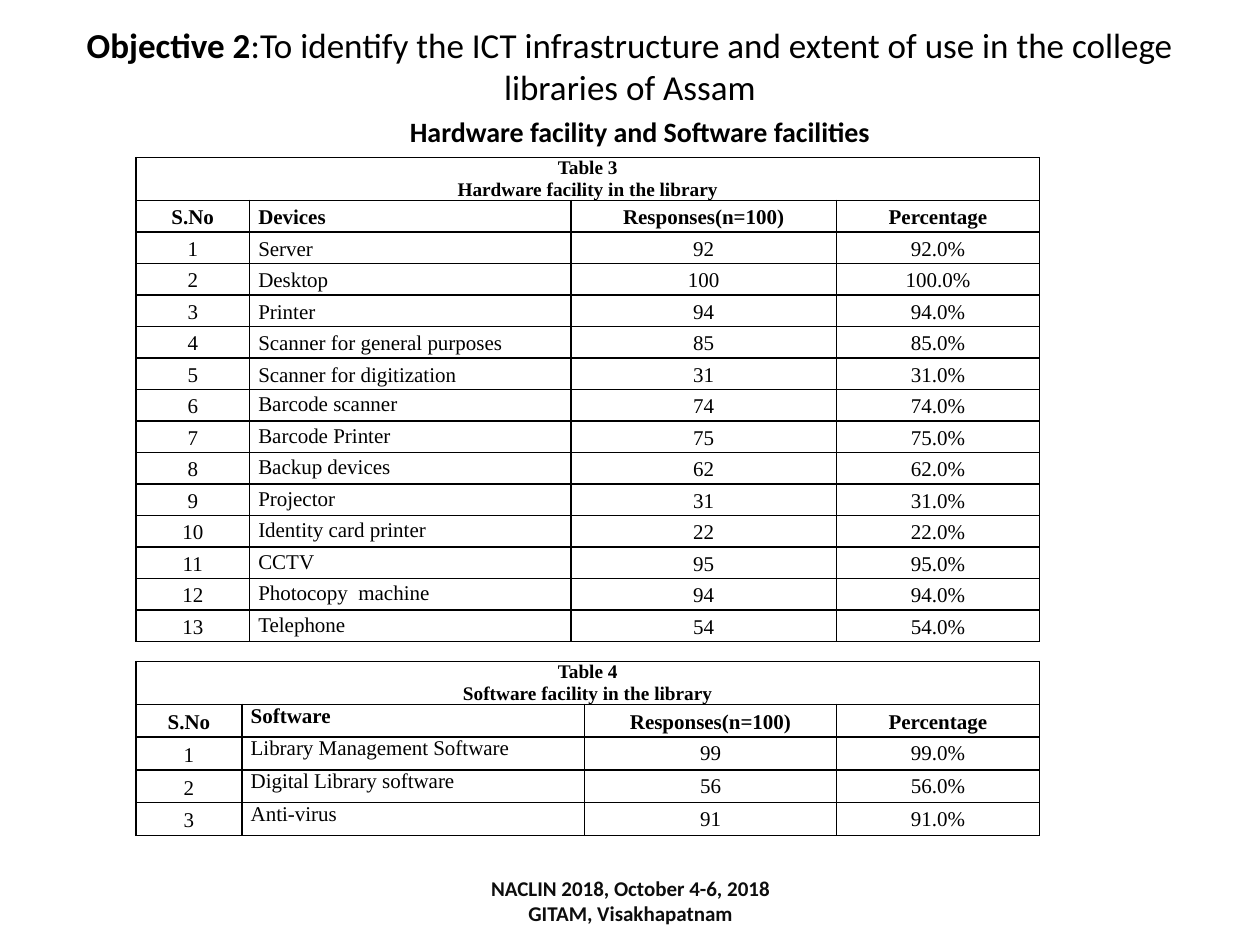
from lxml import etree
from pptx import Presentation
from pptx import util as u
from pptx.dml.color import RGBColor
from pptx.enum import text
from pptx.oxml import ns

hues = {"ink": "000000", "foot": "0D0D0D"}
mid, top = text.MSO_ANCHOR.MIDDLE, text.MSO_ANCHOR.TOP
left, center, just = text.PP_ALIGN.LEFT, text.PP_ALIGN.CENTER, text.PP_ALIGN.JUSTIFY
sans, serif = "Calibri", "Times New Roman"


def write(frame, lines, size, face, hue="ink", align=center, space=1.0):
    for i, runs in enumerate(lines):
        para = frame.paragraphs[0] if i == 0 else frame.add_paragraph()
        para.alignment, para.line_spacing = align, space
        for words, bold in runs:
            run = para.add_run()
            run.text = words
            look = {"size": u.Pt(size), "name": face, "bold": bold}
            for key, val in look.items():
                setattr(run.font, key, val)
            run.font.color.rgb = RGBColor.from_string(hues[hue])


def border(cell):
    props = cell._tc.get_or_add_tcPr()
    for i, side in enumerate(("lnL", "lnR", "lnT", "lnB")):
        line = etree.Element(ns.qn("a:" + side), w=str(u.Pt(1)))
        fill = etree.SubElement(line, ns.qn("a:solidFill"))
        etree.SubElement(fill, ns.qn("a:srgbClr"), val=hues["ink"])
        props.insert(i, line)


deck = Presentation()
deck.slide_width, deck.slide_height = u.Inches(10), u.Inches(7.5)
slide = deck.slides.add_slide(deck.slide_layouts[5])

title = slide.shapes.title
place = {"left": 0.5, "top": 0.17, "width": 9, "height": 0.7}
for key, val in place.items():
    setattr(title, key, u.Inches(val))
head = [[("Objective 2", True),
         (":To identify the ICT infrastructure and extent of use in the college libraries of Assam", False)]]
sub = [[("Hardware facility and Software facilities", True)]]
foot = [[("NACLIN 2018, October 4-6, 2018", True)], [("GITAM, Visakhapatnam", True)]]
subbox = slide.shapes.add_textbox(*map(u.Inches, (0.58, 0.92, 9, 0.25)))
footbox = slide.shapes.add_textbox(*map(u.Inches, (3.42, 6.95, 3.17, 0.4)))
for box, lines, size, hue in ((title, head, 20, "ink"), (subbox, sub, 16, "ink"),
                              (footbox, foot, 12, "foot")):
    frame = box.text_frame
    form = {"word_wrap": True, "auto_size": text.MSO_AUTO_SIZE.NONE, "vertical_anchor": mid}
    for key, val in form.items():
        setattr(frame, key, val)
    write(frame, lines, size, sans, hue)

devices = [("Server", 92), ("Desktop", 100), ("Printer", 94), ("Scanner for general purposes", 85),
           ("Scanner for digitization", 31), ("Barcode scanner", 74), ("Barcode Printer", 75),
           ("Backup devices", 62), ("Projector", 31), ("Identity card printer", 22), ("CCTV", 95),
           ("Photocopy  machine", 94), ("Telephone", 54)]
software = [("Library Management Software", 99), ("Digital Library software", 56), ("Anti-virus", 91)]
tables = [
    {"name": "Table 3", "about": "Hardware facility in the library", "label": "Devices",
     "data": devices, "y": 1.25, "cols": (0.9, 2.55, 2.11, 1.61), "row": 0.25,
     "mids": 6, "align": left, "name gap": 1.15, "value gap": 1.15},
    {"name": "Table 4", "about": "Software facility in the library", "label": "Software",
     "data": software, "y": 5.25, "cols": (0.84, 2.72, 2, 1.61), "row": 0.26,
     "mids": 0, "align": just, "name gap": 1.0, "value gap": 1.0},
]
for part in tables:
    rows = [("S.No", part["label"], "Responses(n=100)", "Percentage")]
    rows += [(str(i), name, str(n), f"{n}.0%") for i, (name, n) in enumerate(part["data"], 1)]
    high = 0.33 + part["row"] * len(rows)
    grid = slide.shapes.add_table(len(rows) + 1, 4, u.Inches(1.08), u.Inches(part["y"]),
                                  u.Inches(7.17), u.Inches(high)).table
    grid.horz_banding = False
    for col, wide in zip(grid.columns, part["cols"]):
        col.width = u.Inches(wide)
    for i, row in enumerate(grid.rows):
        row.height = u.Inches(part["row"] if i else 0.33)
    for cell in grid.iter_cells():
        form = {"margin_left": u.Inches(0.07), "margin_right": u.Inches(0.07),
                "margin_top": 0, "margin_bottom": 0, "vertical_anchor": mid}
        for key, val in form.items():
            setattr(cell, key, val)
        cell.fill.background()
        border(cell)
    grid.cell(0, 0).merge(grid.cell(0, 3))
    write(grid.cell(0, 0).text_frame, [[(part["name"], True)], [(part["about"], True)]], 11, serif)
    for i, row in enumerate(rows):
        for j, words in enumerate(row):
            cell = grid.cell(i + 1, j)
            align, space = center, 1.15
            if j == 1:
                align, space = part["align"], part["name gap"]
                cell.vertical_anchor = mid if i < part["mids"] else top
            elif j > 1 and i:
                space = part["value gap"]
            write(cell.text_frame, [[(words, i == 0)]], 12, serif, align=align, space=space)

deck.save("out.pptx")
